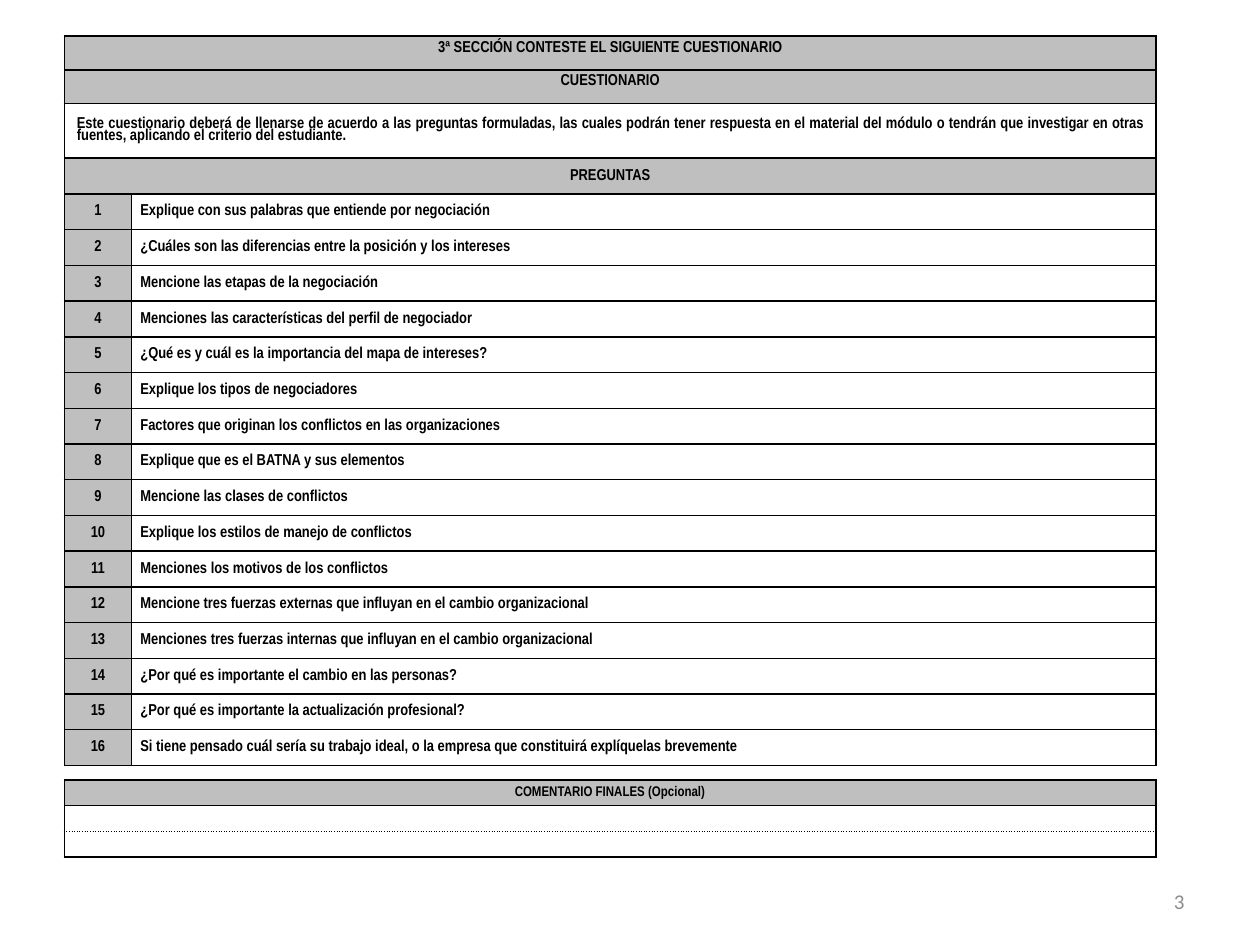
import dataclasses

import pptx
import pptx.dml.color
import pptx.enum.text
import pptx.oxml.ns
import pptx.util
from lxml import etree

Cm = pptx.util.Cm
Pt = pptx.util.Pt
RGB = pptx.dml.color.RGBColor.from_string
ALIGN = pptx.enum.text.PP_ALIGN
ANCHOR = pptx.enum.text.MSO_ANCHOR
qn = pptx.oxml.ns.qn


@dataclasses.dataclass(frozen=True)
class Theme:
    """Colours, fonts and type sizes of the slide."""
    ink: str = "000000"
    header: str = "BFBFBF"
    paper: str = "FFFFFF"
    muted: str = "8C8C8C"
    font: str = "Arial Narrow"
    number_font: str = "Calibri"
    body: float = 9
    small: float = 8
    number: float = 12
    line: float = 1
    dotted: float = 0.75


THEME = Theme()

INTRO = (
    "Este cuestionario deberá de llenarse de acuerdo a las preguntas formuladas, "
    "las cuales podrán tener respuesta en el material del módulo o tendrán que "
    "investigar en otras fuentes, aplicando el criterio del estudiante."
)
QUESTIONS = [
    "Explique con sus palabras que entiende por negociación",
    "¿Cuáles son las diferencias entre la posición y los intereses",
    "Mencione las etapas de la negociación",
    "Menciones las características del perfil de negociador",
    "¿Qué es y cuál es la importancia del mapa de intereses?",
    "Explique los tipos de negociadores",
    "Factores que originan los conflictos en las organizaciones",
    "Explique que es el BATNA y sus elementos",
    "Mencione las clases de conflictos",
    "Explique los estilos de manejo de conflictos",
    "Menciones los motivos de los conflictos",
    "Mencione tres fuerzas externas que influyan en el cambio organizacional",
    "Menciones tres fuerzas internas que influyan en el cambio organizacional",
    "¿Por qué es importante el cambio en las personas?",
    "¿Por qué es importante la actualización profesional?",
    "Si tiene pensado cuál sería su trabajo ideal, o la empresa que constituirá "
    "explíquelas brevemente",
]


def style_run(r, size, font, color, bold=False):
    """Set the font of a run."""
    r.font.size = Pt(size)
    r.font.name = font
    r.font.bold = bold
    r.font.color.rgb = RGB(color)


def set_borders(cell, dotted=()):
    """Draw the four cell borders, dotted on the named sides."""
    tc_pr = cell._tc.get_or_add_tcPr()
    for side in "LRTB":
        width, dash = (THEME.dotted, "sysDot") if side in dotted else (THEME.line, "solid")
        ln = etree.SubElement(tc_pr, qn(f"a:ln{side}"), w=str(Pt(width)))
        fill = etree.SubElement(ln, qn("a:solidFill"))
        etree.SubElement(fill, qn("a:srgbClr"), val=THEME.ink)
        etree.SubElement(ln, qn("a:prstDash"), val=dash)


def fill_cell(cell, text, color, align=ALIGN.CENTER, size=THEME.body, anchor=ANCHOR.MIDDLE,
              margins=(0.25, 0.13), before=0, spacing=None):
    """Write and format one table cell."""
    cell.fill.solid()
    cell.fill.fore_color.rgb = RGB(color)
    cell.vertical_anchor = anchor
    cell.margin_left = cell.margin_right = Cm(margins[0])
    cell.margin_top = cell.margin_bottom = Cm(margins[1])
    p = cell.text_frame.paragraphs[0]
    p.alignment = align
    p.space_before = Pt(before)
    if spacing:
        p.line_spacing = spacing
    if text:
        p.text = text
        style_run(p.runs[0], size, THEME.font, THEME.ink, True)
    else:
        etree.SubElement(p._p, qn("a:endParaRPr"), sz=str(int(size * 100)))


def add_grid(s, left, top, widths, heights):
    """Add a plain table with the given column widths and row heights."""
    gf = s.shapes.add_table(len(heights), len(widths), Cm(left), Cm(top),
                            Cm(sum(widths)), Cm(sum(heights)))
    tbl = gf.table
    tbl.first_row = tbl.horz_banding = False
    for col, width in zip(tbl.columns, widths):
        col.width = Cm(width)
    for row, height in zip(tbl.rows, heights):
        row.height = Cm(height)
    return tbl


def add_questionnaire(s):
    """Add the section headings and the numbered questions."""
    heights = [0.68, 0.68, 1.1, 0.72] + [0.72] * len(QUESTIONS)
    tbl = add_grid(s, 1.3, 0.73, [1.35, 20.65], heights)
    for cell in tbl.iter_cells():
        set_borders(cell)
    headings = [
        ("3ª SECCIÓN CONTESTE EL SIGUIENTE CUESTIONARIO", THEME.header, ALIGN.CENTER, ANCHOR.TOP, 0.8),
        ("CUESTIONARIO", THEME.header, ALIGN.CENTER, ANCHOR.TOP, 0.8),
        (INTRO, THEME.paper, ALIGN.JUSTIFY, ANCHOR.MIDDLE, 0.8),
        ("PREGUNTAS", THEME.header, ALIGN.CENTER, ANCHOR.MIDDLE, None),
    ]
    for i, (text, color, align, anchor, spacing) in enumerate(headings):
        tbl.cell(i, 0).merge(tbl.cell(i, 1))
        fill_cell(tbl.cell(i, 0), text, color, align, anchor=anchor, before=3.6, spacing=spacing)
    for i, question in enumerate(QUESTIONS):
        row = len(headings) + i
        fill_cell(tbl.cell(row, 0), str(i + 1), THEME.header)
        fill_cell(tbl.cell(row, 1), question, THEME.paper, ALIGN.JUSTIFY,
                  margins=(0.18, 0.1), before=4)


def add_comments(s):
    """Add the box for closing comments."""
    tbl = add_grid(s, 1.3, 15.72, [22], [0.52] * 3)
    rows = [("COMENTARIO FINALES (Opcional)", THEME.header, ""),
            ("", THEME.paper, "B"), ("", THEME.paper, "T")]
    for i, (text, color, dotted) in enumerate(rows):
        cell = tbl.cell(i, 0)
        set_borders(cell, dotted)
        fill_cell(cell, text, color, size=THEME.small, margins=(0.25, 0.05))


def add_page_number(s, number):
    """Add the page number at the lower right."""
    sp = s.shapes.add_textbox(Cm(18.21), Cm(17.65), Cm(5.92), Cm(1.02))
    tf = sp.text_frame
    tf.word_wrap = True
    tf.vertical_anchor = ANCHOR.MIDDLE
    tf.text = str(number)
    p = tf.paragraphs[0]
    p.alignment = ALIGN.RIGHT
    style_run(p.runs[0], THEME.number, THEME.number_font, THEME.muted)


def main():
    """Build the slide and save it."""
    prs = pptx.Presentation()
    prs.slide_width, prs.slide_height = Cm(25.4), Cm(19.05)
    s = prs.slides.add_slide(prs.slide_layouts[6])
    add_page_number(s, 3)
    add_questionnaire(s)
    add_comments(s)
    prs.save("out.pptx")


if __name__ == "__main__":
    main()
